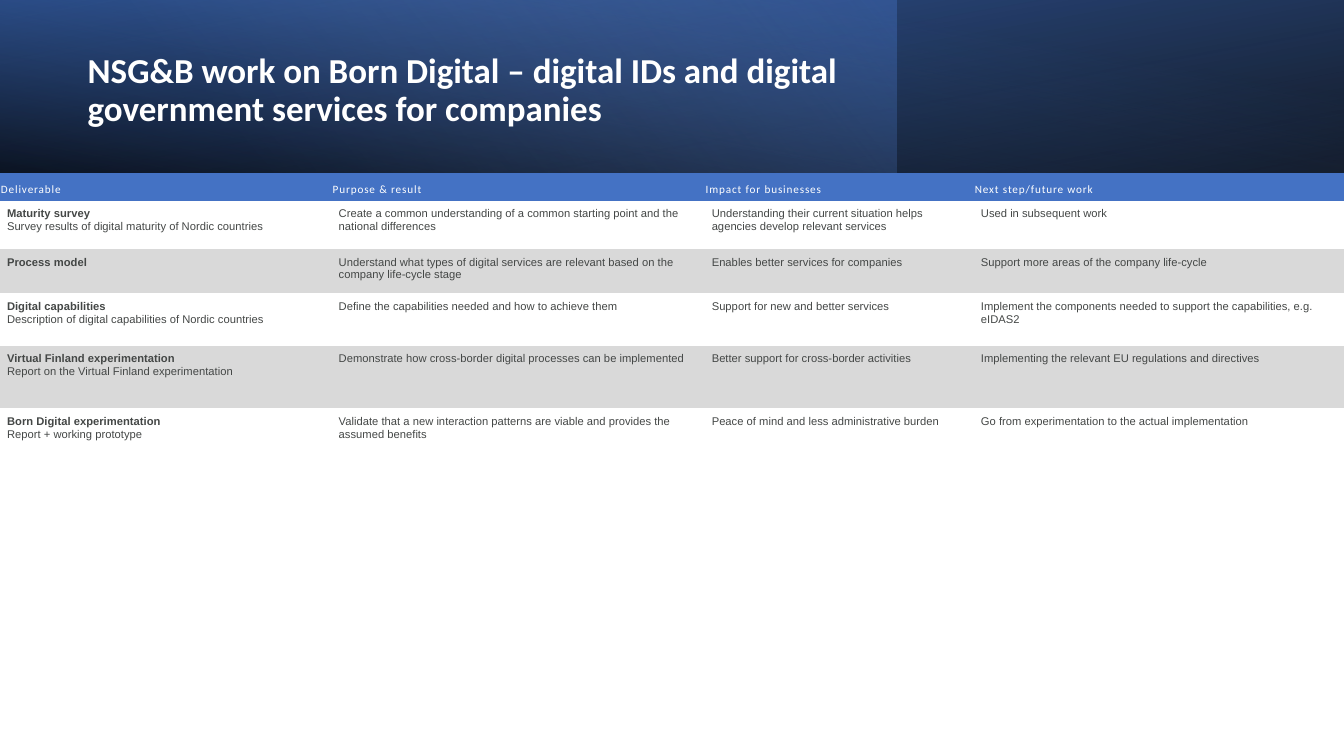
from pptx import Presentation
from pptx.dml.color import RGBColor as Rgb
from pptx.enum.shapes import MSO_SHAPE as Shape
from pptx.enum.text import MSO_ANCHOR as Anchor, MSO_AUTO_SIZE as Fit, PP_ALIGN as Align
from pptx.oxml.ns import qn
from pptx.util import Inches, Pt
from lxml.etree import SubElement

WIDE, BAND = 13.33, 1.72
TITLE = "NSG&B work on Born Digital – digital IDs and digital government services for companies"
COLS = [3.29, 3.7, 2.67, 3.68]
HIGH = [0.27, 0.48, 0.44, 0.52, 0.62, 0.83]
HEAD = ["Deliverable", "Purpose & result", "Impact for businesses", "Next step/future work"]
ROWS = [
    ["Maturity survey\nSurvey results of digital maturity of Nordic countries",
     "Create a common understanding of a common starting point and the national differences",
     "Understanding their current situation helps agencies develop relevant services",
     "Used in subsequent work"],
    ["Process model",
     "Understand what types of digital services are relevant based on the company life-cycle stage",
     "Enables better services for companies",
     "Support more areas of the company life-cycle"],
    ["Digital capabilities\nDescription of digital capabilities of Nordic countries",
     "Define the capabilities needed and how to achieve them",
     "Support for new and better services",
     "Implement the components needed to support the capabilities, e.g. eIDAS2"],
    ["Virtual Finland experimentation\nReport on the Virtual Finland experimentation",
     "Demonstrate how cross-border digital processes can be implemented",
     "Better support for cross-border activities",
     "Implementing the relevant EU regulations and directives"],
    ["Born Digital experimentation\nReport + working prototype",
     "Validate that a new interaction patterns are viable and provides the assumed benefits",
     "Peace of mind and less administrative burden",
     "Go from experimentation to the actual implementation"],
]
NO_STYLE = "{2D5ABB26-0587-4C30-8999-92F81FD0307C}"


def tint(target, color):
    """Set a solid fill."""
    target.solid()
    target.fore_color.rgb = Rgb.from_string(color)


def write(frame, text, size=8, font="Arial", color="444746", bold=False, lead=1.0, gap=0, track=0):
    """Fill a text frame; bold applies to the first line only."""
    frame.word_wrap = True
    frame.text = text
    for i, para in enumerate(frame.paragraphs):
        para.alignment = Align.LEFT
        para.line_spacing = lead
        para.space_before = Pt(gap if i else 0)
        para.space_after = Pt(gap)
        for run in para.runs:
            face = run.font
            face.size, face.name = Pt(size), font
            face.bold = bold and i == 0
            face.color.rgb = Rgb.from_string(color)
            if track:
                run._r.get_or_add_rPr().set("spc", str(track))


def panel(slide, width, height):
    """Add a rectangle at the top left corner."""
    box = slide.shapes.add_shape(Shape.RECTANGLE, 0, 0, Inches(width), Inches(height))
    box.shadow.inherit = False
    box.line.fill.background()
    return box


def shade(slide, width, angle, stops, flip=False, turn=0):
    """Add a banner layer with a clockwise gradient of (place, color, alpha)."""
    box = panel(slide, width, BAND)
    box.rotation = turn
    if flip:
        box._element.spPr.find(qn("a:xfrm")).set("flipH", "1")
    box.fill.gradient()
    box.fill.gradient_angle = 360 - angle
    for stop, (place, color, alpha) in zip(box.fill.gradient_stops, stops):
        stop.position = place / 100
        stop.color.rgb = Rgb.from_string(color)
        node = stop._gs.find(qn("a:srgbClr"))
        SubElement(node, qn("a:alpha")).set("val", str(alpha * 1000))


def heading(slide):
    """Place the title above the banner layers."""
    title = slide.shapes.title
    slide.shapes._spTree.append(title._element)
    title.left, title.top = Inches(0.77), Inches(0.27)
    title.width, title.height = Inches(7.72), Inches(1.27)
    frame = title.text_frame
    frame.auto_size = Fit.NONE
    frame.vertical_anchor = Anchor.MIDDLE
    write(frame, TITLE, size=25, font="Calibri", color="FFFFFF", bold=True, lead=0.9)


def inset(cell, side, top):
    """Set the cell margins."""
    cell.margin_left = cell.margin_right = cell.margin_bottom = Inches(side)
    cell.margin_top = Inches(top)


def grid(slide):
    """Add the table of results."""
    frame = slide.shapes.add_table(len(HIGH), len(COLS), 0, Inches(BAND),
                                   Inches(WIDE), Inches(sum(HIGH)))
    table = frame.table
    table._tbl.tblPr.find(qn("a:tableStyleId")).text = NO_STYLE
    for col, width in zip(table.columns, COLS):
        col.width = Inches(width)
    for row, height in zip(table.rows, HIGH):
        row.height = Inches(height)
    for r, texts in enumerate([HEAD] + ROWS):
        for c, text in enumerate(texts):
            cell = table.cell(r, c)
            if r == 0:
                tint(cell.fill, "4472C4")
                inset(cell, 0.01, 0.05)
                cell.vertical_anchor = Anchor.MIDDLE
                write(cell.text_frame, text, font="Calibri", color="FFFFFF",
                      lead=1.15, gap=1, track=60)
                continue
            if r % 2:
                cell.fill.background()
            else:
                tint(cell.fill, "D9D9D9")
            inset(cell, 0.07, 0.07)
            write(cell.text_frame, text, bold=c == 0)


def main():
    """Build and save the slide."""
    deck = Presentation()
    deck.slide_width, deck.slide_height = Inches(WIDE), Inches(7.5)
    slide = deck.slides.add_slide(deck.slide_layouts[5])
    tint(panel(slide, WIDE, 7.5).fill, "FFFFFF")
    shade(slide, WIDE, 100, [(0, "000000", 96), (100, "2F5597", 100)], flip=True, turn=180)
    shade(slide, 8.89, 140, [(0, "4472C4", 41), (74, "8FAADC", 0)])
    shade(slide, WIDE, 260, [(0, "000000", 63), (78, "4472C4", 15)], flip=True)
    heading(slide)
    grid(slide)
    deck.save("out.pptx")


if __name__ == "__main__":
    main()
